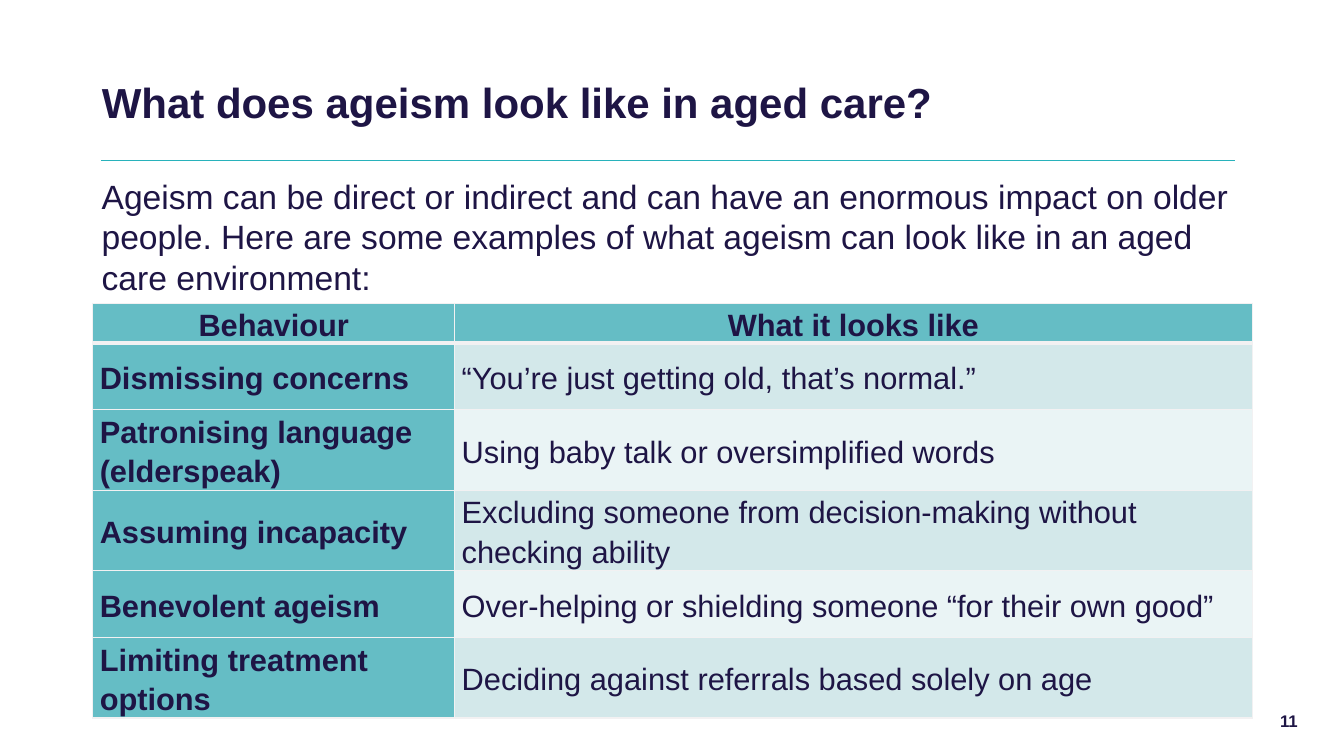
from lxml import etree
from pptx import Presentation
from pptx import util as u
from pptx.dml.color import RGBColor
from pptx.enum import shapes, text
from pptx.oxml.ns import qn

COLOURS = {
    "ink": "1E1545",
    "rule": "28B2BB",
    "teal": "65BDC5",
    "band": "D3E8EA",
    "pale": "EAF4F5",
    "border": "F2F1F2",
}
BEHAVIOURS = [
    ("Behaviour", "What it looks like"),
    ("Dismissing concerns", "“You’re just getting old, that’s normal.”"),
    ("Patronising language (elderspeak)", "Using baby talk or oversimplified words"),
    ("Assuming incapacity",
     "Excluding someone from decision-making without checking ability"),
    ("Benevolent ageism", "Over-helping or shielding someone “for their own good”"),
    ("Limiting treatment options", "Deciding against referrals based solely on age"),
]
COLUMN_WIDTHS = [3.59, 7.91]
ROW_HEIGHTS = [0.38, 0.66, 0.8, 0.8, 0.66, 0.8]


def write(frame, words, size, bold=False, align=text.PP_ALIGN.LEFT):
    """Fill a text frame with one middle-anchored paragraph and return it."""
    frame.text = words
    frame.word_wrap = True
    frame.vertical_anchor = text.MSO_ANCHOR.MIDDLE
    paragraph = frame.paragraphs[0]
    paragraph.alignment = align
    paragraph.font.name = "Arial"
    paragraph.font.size = u.Pt(size)
    paragraph.font.bold = bold
    paragraph.font.color.rgb = RGBColor.from_string(COLOURS["ink"])
    return paragraph


def add_border(cell, side, points):
    line = etree.SubElement(cell._tc.get_or_add_tcPr(), qn(f"a:ln{side}"),
                            w=str(u.Pt(points)))
    fill = etree.SubElement(line, qn("a:solidFill"))
    etree.SubElement(fill, qn("a:srgbClr"), val=COLOURS["border"])


prs = Presentation()
prs.slide_width, prs.slide_height = u.Inches(13.33), u.Inches(7.5)
slide = prs.slides.add_slide(prs.slide_layouts[5])

# Heading and the rule below it
title = slide.shapes.title
title.left, title.top = u.Inches(0.91), u.Inches(0.74)
title.width, title.height = u.Inches(11.27), u.Inches(0.6)
heading = write(title.text_frame, "What does ageism look like in aged care?", 30, True)
heading.line_spacing = 0.9
heading.space_before, heading.space_after = u.Pt(18), u.Pt(12)
title.text_frame.auto_size = text.MSO_AUTO_SIZE.NONE

rule = slide.shapes.add_connector(
    shapes.MSO_CONNECTOR.STRAIGHT,
    u.Inches(1), u.Inches(1.59), u.Inches(12.25), u.Inches(1.59))
rule.line.color.rgb = RGBColor.from_string(COLOURS["rule"])
rule.line.width = u.Pt(1)
etree.SubElement(rule._element.spPr, qn("a:effectLst"))

# Table of behaviours
table = slide.shapes.add_table(
    len(BEHAVIOURS), 2, u.Inches(0.92), u.Inches(3.01),
    u.Inches(sum(COLUMN_WIDTHS)), u.Inches(sum(ROW_HEIGHTS))).table
for column, width in zip(table.columns, COLUMN_WIDTHS):
    column.width = u.Inches(width)

for r, (behaviour, height) in enumerate(zip(BEHAVIOURS, ROW_HEIGHTS)):
    table.rows[r].height = u.Inches(height)
    for c, words in enumerate(behaviour):
        cell = table.cell(r, c)
        is_heading = r == 0 or c == 0
        align = text.PP_ALIGN.CENTER if r == 0 else text.PP_ALIGN.LEFT
        entry = write(cell.text_frame, words, 22, is_heading, align)
        entry.line_spacing = 1.15
        entry.space_before = entry.space_after = u.Pt(6)
        cell.vertical_anchor = text.MSO_ANCHOR.MIDDLE
        cell.margin_left = cell.margin_right = u.Inches(0.07)
        cell.margin_top = cell.margin_bottom = 0
        for side in "LRTB":
            under_header = (r, side) in [(0, "B"), (1, "T")]
            add_border(cell, side, 3 if under_header else 1)
        shade = "teal" if is_heading else "band" if r % 2 else "pale"
        cell.fill.solid()
        cell.fill.fore_color.rgb = RGBColor.from_string(COLOURS[shade])

# Introduction and page number
intro = slide.shapes.add_textbox(
    u.Inches(0.91), u.Inches(1.69), u.Inches(11.5), u.Inches(1.31))
write(intro.text_frame,
      "Ageism can be direct or indirect and can have an enormous impact on older "
      "people. Here are some examples of what ageism can look like in an aged "
      "care environment:", 24)

page_number = slide.shapes.add_textbox(
    u.Inches(12.52), u.Inches(6.95), u.Inches(0.45), u.Inches(0.4))
write(page_number.text_frame, "11", 12, True, text.PP_ALIGN.RIGHT)

prs.save("out.pptx")
